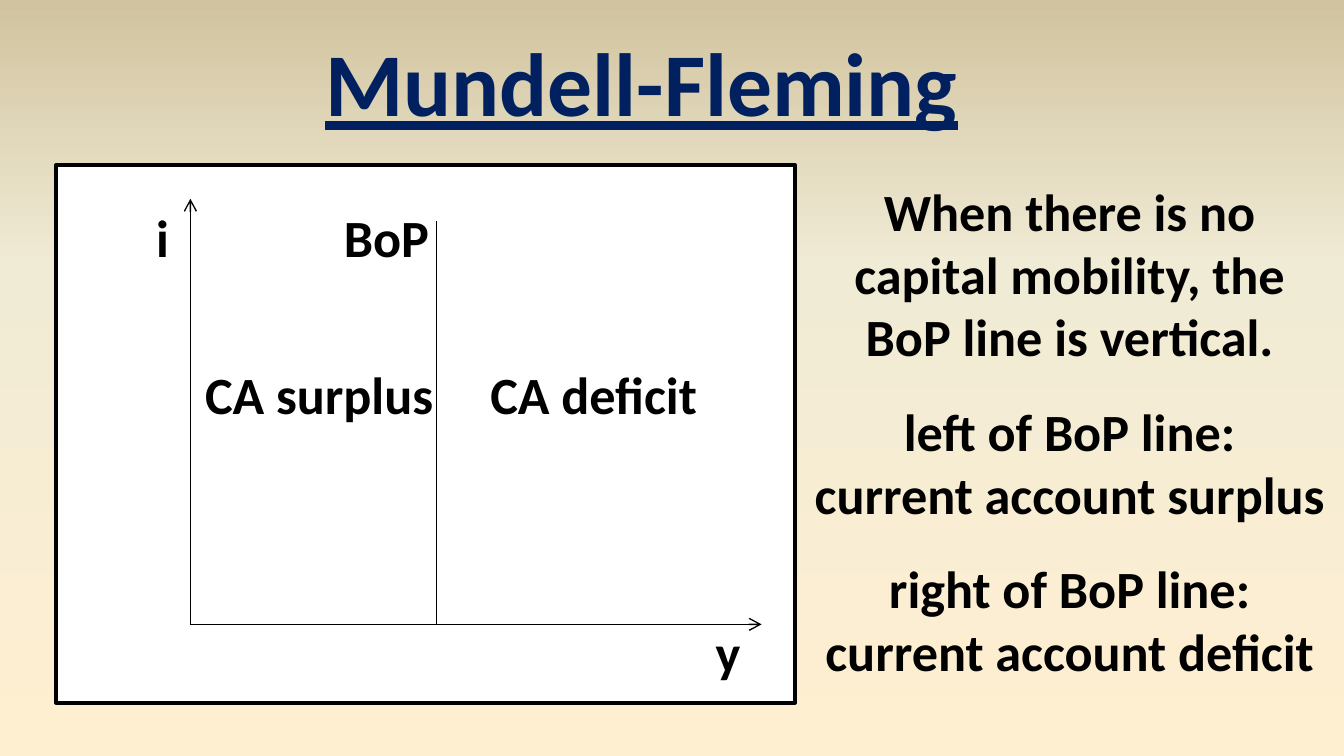
from copy import deepcopy

from lxml.etree import SubElement
from pptx import Presentation
from pptx.dml.color import RGBColor
from pptx.enum.shapes import MSO_CONNECTOR, MSO_SHAPE
from pptx.enum.text import MSO_ANCHOR, MSO_AUTO_SIZE, PP_ALIGN
from pptx.oxml.ns import qn
from pptx.util import Inches, Pt

BLACK = RGBColor(0x00, 0x00, 0x00)
WHITE = RGBColor(0xFF, 0xFF, 0xFF)
NAVY = RGBColor(0x00, 0x20, 0x60)
CREAM = RGBColor(0xFF, 0xEF, 0xD1)
IVORY = RGBColor(0xF0, 0xEB, 0xD5)
SAND = RGBColor(0xD1, 0xC3, 0x9F)

# The slide is a grid of square cells, twelve to the inch
COLUMNS, ROWS = 120, 67.5


def grid(cells):
    return round(Inches(1) * cells / 12)


class SlideBuilder:
    font = "Calibri"
    text_size = 28
    title_size = 48

    def __init__(self, slide):
        self.slide = slide
        self.diagram = slide.shapes.add_group_shape()

    def background(self, stops):
        fill = self.slide.background.fill
        fill.gradient()
        fill.gradient_angle = 90
        stop_list = self.slide.element.find(".//" + qn("a:gsLst"))
        while len(stop_list) < len(stops):
            stop_list.append(deepcopy(stop_list[0]))
        for stop, (position, color) in zip(fill.gradient_stops, stops):
            stop.position = position
            stop.color.rgb = color

    def format_text(self, shape, size, color=BLACK, wrap=True):
        frame = shape.text_frame
        frame.word_wrap = wrap
        frame.auto_size = MSO_AUTO_SIZE.NONE
        frame.vertical_anchor = MSO_ANCHOR.TOP
        for paragraph in frame.paragraphs:
            paragraph.alignment = PP_ALIGN.CENTER
            for run in paragraph.runs:
                run.font.name = self.font
                run.font.size = Pt(size)
                run.font.bold = True
                run.font.color.rgb = color

    def place(self, shape, left, top, width, height):
        shape.left, shape.top = grid(left), grid(top)
        shape.width, shape.height = grid(width), grid(height)

    def title(self, text, *box):
        shape = self.slide.shapes.title
        self.place(shape, *box)
        shape.text_frame.text = text
        self.format_text(shape, self.title_size, NAVY, wrap=False)
        shape.text_frame.paragraphs[0].runs[0].font.underline = True

    def body(self, blocks, *box):
        shape = self.slide.placeholders[1]
        self.place(shape, *box)
        shape.text_frame.text = "\n".join("\n".join(block) for block in blocks)
        self.format_text(shape, self.text_size)
        gaps = [17 if block_index and not line_index else 0
                for block_index, block in enumerate(blocks)
                for line_index in range(len(block))]
        for paragraph, gap in zip(shape.text_frame.paragraphs, gaps):
            paragraph.space_before = Pt(gap)
            properties = paragraph._p.get_or_add_pPr()
            properties.set("marL", "0")
            properties.set("indent", "0")
            SubElement(properties, qn("a:buNone"))

    def panel(self, *box):
        shape = self.diagram.shapes.add_shape(
            MSO_SHAPE.RECTANGLE, *map(grid, box))
        shape.shadow.inherit = False
        shape.fill.solid()
        shape.fill.fore_color.rgb = WHITE
        shape.line.color.rgb = BLACK
        shape.line.width = Pt(2)

    def line(self, start, end, arrow=False):
        connector = self.diagram.shapes.add_connector(
            MSO_CONNECTOR.STRAIGHT, *map(grid, start + end))
        connector.line.color.rgb = BLACK
        connector.line.width = Pt(0.75)
        properties = connector._element.spPr
        if arrow:
            SubElement(properties.find(qn("a:ln")), qn("a:tailEnd"), type="arrow")
        SubElement(properties, qn("a:effectLst"))

    def label(self, text, left, top, width):
        shape = self.diagram.shapes.add_textbox(
            *map(grid, (left, top, width, 6.84)))
        shape.text_frame.text = text
        self.format_text(shape, self.text_size)


def main():
    presentation = Presentation()
    presentation.slide_width = grid(COLUMNS)
    presentation.slide_height = grid(ROWS)
    slide = presentation.slides.add_slide(presentation.slide_layouts[1])
    builder = SlideBuilder(slide)
    builder.background([(0, CREAM), (0.65, IVORY), (1, SAND)])

    # Title and explanation
    builder.title("Mundell-Fleming", 27.6, 1.8, 59.4, 10.9)
    builder.body([
        ["When there is no capital mobility, the BoP line is vertical."],
        ["left of BoP line:", "current account surplus"],
        ["right of BoP line:", "current account deficit"],
    ], 71, 15.4, 49, 46.4)

    # Diagram: panel, axes and BoP line
    panel_left, panel_top = 5, 14.75
    axis_left, axis_top, axis_bottom = panel_left + 12, panel_top + 3, panel_top + 41
    bop_column = 39
    origin = (axis_left, axis_bottom)
    builder.panel(panel_left, panel_top, 66, 48)
    builder.line(origin, (axis_left, axis_top), arrow=True)
    builder.line(origin, (68, axis_bottom), arrow=True)
    builder.line((bop_column, axis_top + 2), (bop_column, axis_bottom))

    # Diagram labels
    region_top = axis_top + 14
    builder.label("i", 10, axis_top, 9)
    builder.label("y", 61, axis_bottom - 1, 8)
    builder.label("BoP", 29, axis_top, 11)
    builder.label("CA surplus", axis_left, region_top, 23)
    builder.label("CA deficit", bop_column + 3, region_top, 22)

    presentation.save("out.pptx")


if __name__ == "__main__":
    main()
